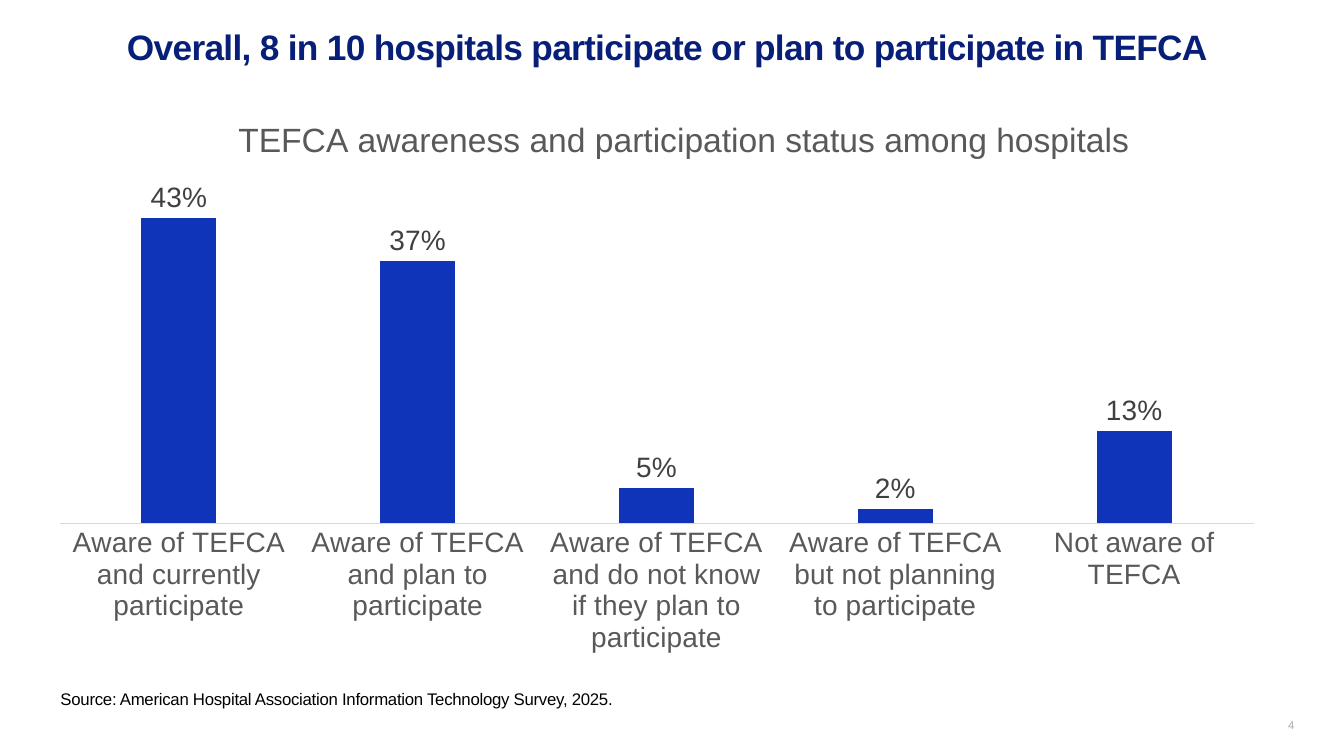
from lxml import etree
from pptx import Presentation
from pptx.chart.data import CategoryChartData
from pptx.dml.color import RGBColor
from pptx.enum.chart import XL_CHART_TYPE, XL_LABEL_POSITION, XL_TICK_MARK
from pptx.enum.text import MSO_ANCHOR, PP_ALIGN
from pptx.oxml.ns import qn
from pptx.util import Pt

COLUMN = XL_CHART_TYPE.COLUMN_CLUSTERED
OUTSIDE = XL_LABEL_POSITION.OUTSIDE_END
NO_TICK = XL_TICK_MARK.NONE
TOP, BOTTOM = MSO_ANCHOR.TOP, MSO_ANCHOR.BOTTOM
LEFT, RIGHT = PP_ALIGN.LEFT, PP_ALIGN.RIGHT
FONT = "Arial"
COLORS = {
    "title": "081F79", "bar": "0F34BA", "axis": "D9D9D9", "text": "595959",
    "label": "404040", "source": "000000", "number": "A1AAB1",
}


def put_text(sp, text, box, size, color, bold=False, align=LEFT, anchor=TOP,
             margins=(0, 0, 0, 0), line=1.0, spacing=0):
    sp.left, sp.top, sp.width, sp.height = [Pt(v) for v in box]
    tf = sp.text_frame
    tf.word_wrap = True
    tf.vertical_anchor = anchor
    tf.margin_left, tf.margin_top, tf.margin_right, tf.margin_bottom = [Pt(v) for v in margins]
    p = tf.paragraphs[0]
    p.alignment = align
    p.line_spacing = line
    p.space_before = Pt(0)
    r = p.add_run()
    r.text = text
    r.font.name, r.font.size, r.font.bold = FONT, Pt(size), bold
    r.font.color.rgb = RGBColor.from_string(COLORS[color])
    if spacing:
        r.font._element.set("spc", str(round(spacing * 100)))


def set_layout(parent, index, **values):
    for old in parent.findall(qn("c:layout")):
        parent.remove(old)
    layout = etree.Element(qn("c:layout"))
    manual = etree.SubElement(layout, qn("c:manualLayout"))
    for tag, value in values.items():
        etree.SubElement(manual, qn("c:" + tag)).set("val", str(value))
    parent.insert(index, layout)


prs = Presentation()
prs.slide_width, prs.slide_height = Pt(960), Pt(540)
s = prs.slides.add_slide(prs.slide_layouts[5])

put_text(s.shapes.title, "Overall, 8 in 10 hospitals participate or plan to participate in TEFCA",
         (90.72, 18, 817.92, 53.28), 25.2, "title", bold=True,
         margins=(0, 0, 0, 3.6), spacing=-0.5)

chart_title = "TEFCA awareness and participation status among hospitals"
shares = {
    "Aware of TEFCA and currently participate": 0.43,
    "Aware of TEFCA and plan to participate": 0.37,
    "Aware of TEFCA and do not know if they plan to participate": 0.05,
    "Aware of TEFCA but not planning to participate": 0.02,
    "Not aware of TEFCA": 0.13,
}
data = CategoryChartData(number_format="0%")
data.categories = list(shares)
data.add_series(chart_title, list(shares.values()))
chart = s.shapes.add_chart(COLUMN, Pt(25.92), Pt(71.28), Pt(874.8), Pt(419.76), data).chart
chart.has_legend = False
chart.font.name, chart.font.size = FONT, Pt(10)

chart.has_title = True
title = chart.chart_title
title.include_in_layout = False
p = title.text_frame.paragraphs[0]
r = p.add_run()
r.text = chart_title
title_font = r.font
set_layout(title._element, 1, xMode="edge", yMode="edge", x=0.16, y=0.02)
set_layout(chart._chartSpace.chart.plotArea, 0, layoutTarget="inner", xMode="edge", yMode="edge",
           x=0.019, y=0.117, w=0.975, h=0.604)

plot = chart.plots[0]
plot.vary_by_categories = False
plot.gap_width, plot.overlap = 219, -27
bars = plot.series[0]
bars.format.fill.solid()
bars.format.fill.fore_color.rgb = RGBColor.from_string(COLORS["bar"])
labels = bars.data_labels
labels.show_value = True
labels.position = OUTSIDE
labels.number_format, labels.number_format_is_linked = "0%", False

cat = chart.category_axis
cat.major_tick_mark = cat.minor_tick_mark = NO_TICK
cat.format.line.width = Pt(0.75)
cat.format.line.color.rgb = RGBColor.from_string(COLORS["axis"])
val = chart.value_axis
val.minimum_scale, val.maximum_scale = 0, 0.5
val.has_major_gridlines = False
val.visible = False

for font, size, color in ((title_font, 24, "text"), (cat.tick_labels.font, 20, "text"),
                          (labels.font, 20, "label")):
    font.name, font.size, font.bold = FONT, Pt(size), False
    font.color.rgb = RGBColor.from_string(COLORS[color])

put_text(s.shapes.add_textbox(0, 0, 0, 0),
         "Source: American Hospital Association Information Technology Survey, 2025.",
         (43.2, 483.12, 697.68, 38.88), 12, "source",
         margins=(0, 7.2, 0, 3.6), line=1.1, spacing=-0.2)
put_text(s.shapes.add_textbox(0, 0, 0, 0), "4", (902.88, 496.08, 21.6, 26.64), 8, "number",
         align=RIGHT, anchor=BOTTOM, line=0.9)

prs.save("out.pptx")
